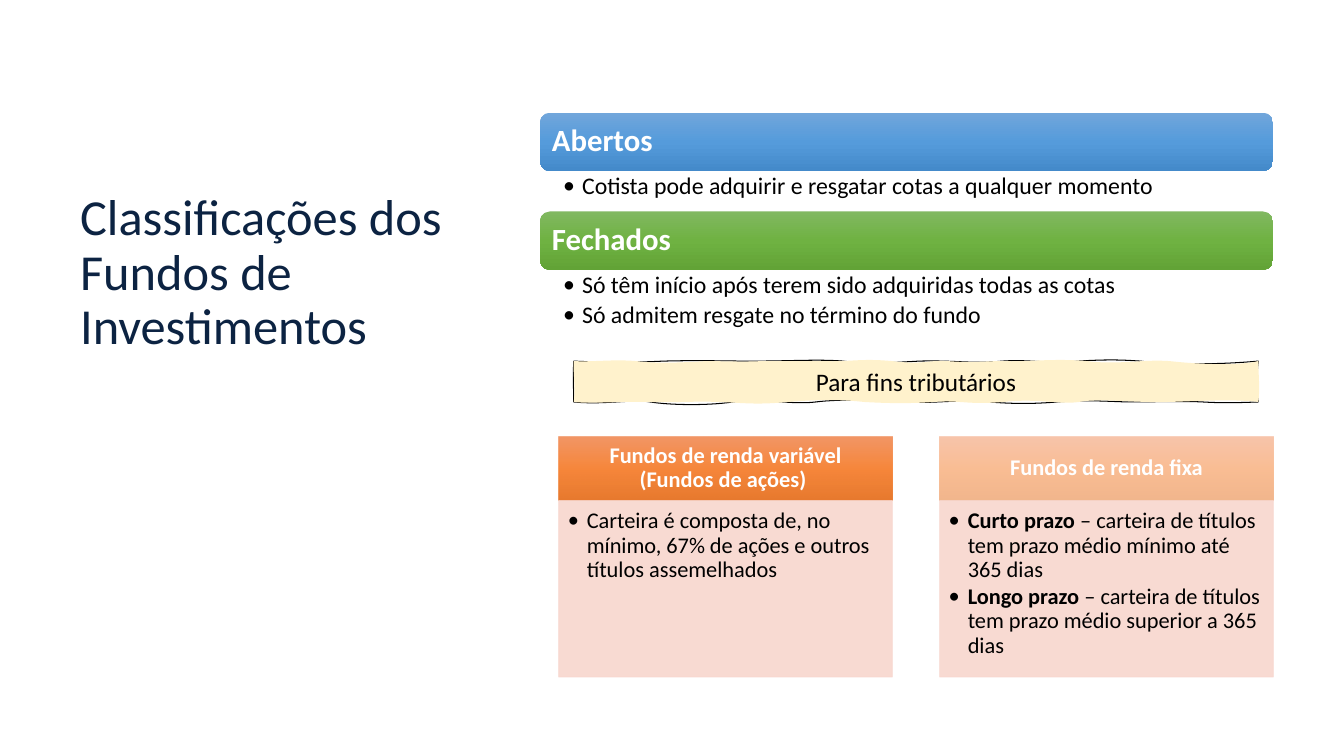
from lxml import etree
from pptx import Presentation
from pptx import util as u
from pptx.dml.color import RGBColor
from pptx.enum import shapes, text
from pptx.oxml.ns import qn

FONT = "Calibri"
TITLE = "Classificações dos Fundos de Investimentos"
BANNER = "Para fins tributários"
BLUE = ("71A6DB", "559BDB", "448ACA")
GREEN = ("81B861", "6FB242", "62A336")
ORANGE = ("F18C57", "F67B28", "E56C19")
PINK = "F8D7CE"

# Heading, gradient, height of the bullet area in cm, bullets as (text, bold) runs
BARS = [
    ("Abertos", BLUE, 1.02,
     [[("Cotista pode adquirir e resgatar cotas a qualquer momento", False)]]),
    ("Fechados", GREEN, 1.65,
     [[("Só têm início após terem sido adquiridas todas as cotas", False)],
      [("Só admitem resgate no término do fundo", False)]]),
]
# Heading, opacity of the heading in percent, bullets
COLUMNS = [
    ("Fundos de renda variável (Fundos de ações) ", 90,
     [[("Carteira é composta de, no mínimo, 67% de ações e outros títulos assemelhados", False)]]),
    ("Fundos de renda fixa", 50,
     [[("Curto prazo ", True),
       ("– carteira de títulos tem prazo médio mínimo até 365 dias", False)],
      [("Longo prazo ", True),
       ("– carteira de títulos tem prazo médio superior a 365 dias", False)]]),
]

# Hand-drawn banner edges: Bézier points in hundredths of an inch from its corner
BANNER_SIZE = (679, 41)
OUTLINE = [
    (0, 0), (22, 1), (50, 2), (89, 0), (129, -1), (143, 0), (178, 0), (214, 0), (243, -2),
    (267, 0), (291, 3), (307, 2), (343, 0), (378, -1), (396, 3), (425, 0), (453, -2),
    (468, 3), (500, 0), (533, -2), (547, -1), (562, 0), (577, 2), (625, 5), (679, 0),
    (677, 19), (677, 26), (679, 41), (652, 42), (642, 42), (624, 41), (606, 40), (576, 41),
    (549, 41), (521, 40), (506, 39), (480, 41), (454, 43), (439, 43), (411, 41), (383, 38),
    (355, 43), (329, 41), (304, 39), (263, 38), (240, 41), (217, 44), (185, 37), (158, 41),
    (131, 45), (94, 44), (76, 41), (58, 38), (30, 44), (0, 41), (0, 25), (-1, 21), (0, 0)]
FILLED = [
    (0, 0), (20, 1), (39, -2), (62, 0), (86, 3), (114, 1), (131, 0), (148, 0), (169, 1),
    (186, 0), (203, 0), (221, 0), (248, 0), (274, 1), (284, -3), (316, 0), (349, 4),
    (346, -1), (371, 0), (397, 2), (405, 0), (426, 0), (448, 1), (477, -3), (509, 0),
    (540, 4), (564, -2), (591, 0), (617, 3), (658, 5), (679, 0), (679, 10), (681, 29),
    (679, 41), (655, 38), (624, 40), (590, 41), (556, 42), (521, 37), (501, 41), (481, 44),
    (462, 37), (426, 41), (389, 44), (385, 39), (357, 41), (329, 43), (306, 42), (288, 41),
    (271, 39), (246, 38), (213, 41), (180, 44), (171, 42), (144, 41), (118, 40), (98, 42),
    (76, 41), (54, 40), (16, 43), (0, 41), (2, 25), (-1, 9), (0, 0)]


def rgb(value):
    return RGBColor.from_string(value)


def set_alpha(color, percent):
    etree.SubElement(color, qn("a:alpha")).set("val", str(percent * 1000))


def fill_gradient(s, colors, alpha=100):
    """Fill from top to bottom with evenly spaced colours."""
    s.fill.gradient()
    s.fill.gradient_angle = 270
    stops = s._element.spPr.find(".//" + qn("a:gsLst"))
    for stop in list(stops):
        stops.remove(stop)
    for i, value in enumerate(colors):
        stop = etree.SubElement(stops, qn("a:gs"), pos=str(100000 * i // (len(colors) - 1)))
        color = etree.SubElement(stop, qn("a:srgbClr"), val=value)
        if alpha < 100:
            set_alpha(color, alpha)
    s.line.fill.background()


def add_box(kind, *box):
    s = slide.shapes.add_shape(kind, *map(u.Cm, box))
    s.shadow.inherit = False
    return s


def add_text(box, *args, **options):
    write(slide.shapes.add_textbox(*map(u.Cm, box)), *args, **options)


def write(s, paragraphs, size, color="000000", insets=(0.25, 0.13, 0.25, 0.13),
          middle=False, centered=False, bullets=False, spacing=0.9, after=0):
    """Write paragraphs of (text, bold) runs; insets are left, top, right, bottom in cm."""
    tf = s.text_frame
    tf.word_wrap = True
    tf.margin_left, tf.margin_top, tf.margin_right, tf.margin_bottom = map(u.Cm, insets)
    tf.vertical_anchor = text.MSO_ANCHOR.MIDDLE if middle else text.MSO_ANCHOR.TOP
    for i, runs in enumerate(paragraphs):
        p = tf.add_paragraph() if i else tf.paragraphs[0]
        if bullets:
            pPr = p._p.get_or_add_pPr()
            pPr.set("marL", str(u.Cm(0.48)))
            pPr.set("indent", str(-u.Cm(0.48)))
            etree.SubElement(pPr, qn("a:buFont"), typeface=FONT)
            etree.SubElement(pPr, qn("a:buChar"), char="•")
        p.alignment = text.PP_ALIGN.CENTER if centered else text.PP_ALIGN.LEFT
        p.line_spacing = spacing
        p.space_after = u.Pt(after)
        for words, bold in runs:
            r = p.add_run()
            r.text = words
            r.font.name, r.font.size, r.font.bold = FONT, u.Pt(size), bold
            r.font.color.rgb = rgb(color)


def add_curve_path(paths, points, **attributes):
    """Add a closed chain of cubic Bézier curves to a freeform's path list."""
    w, h = map(str, BANNER_SIZE)
    path = etree.SubElement(paths, qn("a:path"), w=w, h=h, **attributes)
    groups = [("a:moveTo", points[:1])]
    groups += [("a:cubicBezTo", points[i:i + 3]) for i in range(1, len(points), 3)]
    for tag, group in groups:
        command = etree.SubElement(path, qn(tag))
        for x, y in group:
            etree.SubElement(command, qn("a:pt"), x=str(x), y=str(y))
    etree.SubElement(path, qn("a:close"))


def add_banner(left, top, width, height):
    builder = slide.shapes.build_freeform(u.Cm(left), u.Cm(top))
    builder.add_line_segments([(u.Cm(left + width), u.Cm(top)),
                               (u.Cm(left + width), u.Cm(top + height))])
    s = builder.convert_to_shape()
    s.shadow.inherit = False
    paths = s._element.spPr.find(".//" + qn("a:pathLst"))
    paths.remove(paths[0])
    add_curve_path(paths, OUTLINE, fill="none")
    add_curve_path(paths, FILLED, stroke="0")
    s.fill.solid()
    s.fill.fore_color.rgb = rgb("FFF2CC")
    s.line.color.rgb = rgb("000000")
    s.line.width = u.Pt(0.75)
    return s


prs = Presentation()
prs.slide_width, prs.slide_height = u.Cm(33.87), u.Cm(19.05)
slide = prs.slides.add_slide(prs.slide_layouts[6])

left, width, bar_height, top, inner = 13.61, 18.47, 1.47, 2.84, 0.07
for heading, colors, text_height, items in BARS:
    s = add_box(shapes.MSO_SHAPE.ROUNDED_RECTANGLE, left, top, width, bar_height)
    fill_gradient(s, colors)
    add_text((left + inner, top + inner, width - 2 * inner, bar_height - 2 * inner),
             [[(heading, True)]], 22, "FFFFFF", (0.23,) * 4, middle=True)
    top += bar_height
    add_text((left, top, width, text_height), items, 17,
             insets=(0.58, 0.08, 0.43, 0.08), bullets=True, after=3)
    top += text_height

write(add_banner(14.46, 9.1, 17.25, 1.03), [[(BANNER, False)]], 18,
      middle=True, centered=True, spacing=1)

column_left, column_width, pitch = 14.08, 8.41, 9.6
head_top, head_height, body_height = 11, 1.61, 4.45
for i, (heading, alpha, items) in enumerate(COLUMNS):
    x = column_left + i * pitch
    head = (x, head_top, column_width, head_height)
    body = (x, head_top + head_height, column_width, body_height)
    s = add_box(shapes.MSO_SHAPE.RECTANGLE, *head)
    fill_gradient(s, ORANGE, alpha)
    add_text(head, [[(heading, True)]], 16, "FFFFFF", (0.3, 0.18, 0.3, 0.18), True, True)
    s = add_box(shapes.MSO_SHAPE.RECTANGLE, *body)
    s.fill.solid()
    s.fill.fore_color.rgb = s.line.color.rgb = rgb(PINK)
    s.line.width = u.Pt(0.5)
    for color in s._element.spPr.iter(qn("a:srgbClr")):
        set_alpha(color, 90)
    add_text(body, items, 16, insets=(0.23, 0.23, 0.3, 0.35), bullets=True, after=2.4)

add_text((1.77, 4.72, 11, 12.55), [[(TITLE, False)]], 36, "0C2342")

prs.save("out.pptx")
